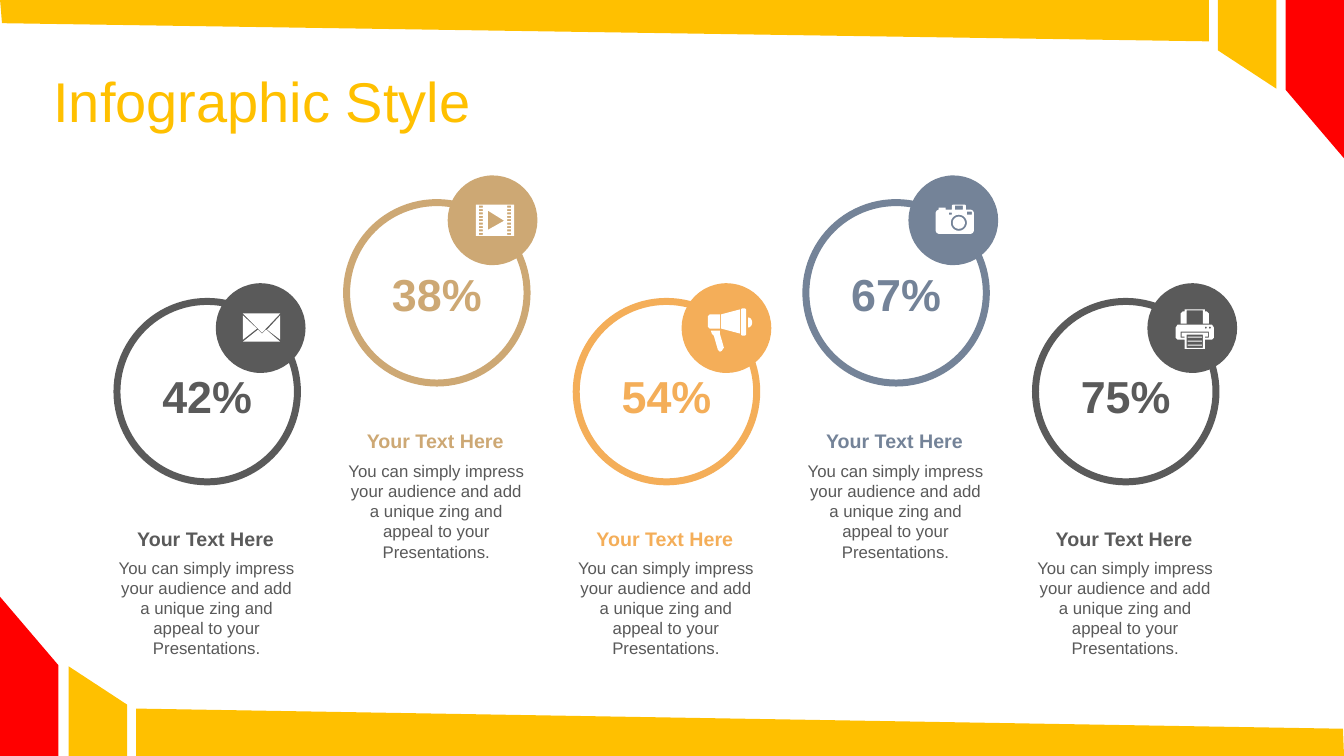
from dataclasses import dataclass
from math import cos, pi, sin

from pptx import Presentation
from pptx.dml.color import RGBColor
from pptx.enum.shapes import MSO_SHAPE
from pptx.enum.text import MSO_ANCHOR, MSO_AUTO_SIZE, PP_ALIGN
from pptx.shapes.autoshape import Shape
from pptx.slide import Slide
from pptx.text.text import TextFrame
from pptx.util import Inches, Pt

OVAL = MSO_SHAPE.OVAL
LEFT, CENTER = PP_ALIGN.LEFT, PP_ALIGN.CENTER
MIDDLE, TOP = MSO_ANCHOR.MIDDLE, MSO_ANCHOR.TOP
GROW, FIXED = MSO_AUTO_SIZE.SHAPE_TO_FIT_TEXT, MSO_AUTO_SIZE.NONE

WHITE, GOLD, RED = "FFFFFF", "FFC000", "FF0000"
GREY, TAN, ORANGE, SLATE = "5A5A5A", "CDA874", "F4AE59", "748398"
BODY_GREY = "595959"
HEADING = "Your Text Here"
BODY = ("You can simply impress your audience and add a unique zing "
        "and appeal to your Presentations.")
RING, BADGE = 1.79, 0.89
FIRST_LEFT, SPAN = 1.16, 9.11

Contour = list[tuple[float, float]]


def rect(x1: float, y1: float, x2: float, y2: float) -> Contour:
    return [(x1, y1), (x2, y1), (x2, y2), (x1, y2)]


def chamfered(x1: float, y1: float, x2: float, y2: float, c: float) -> Contour:
    return [(x1 + c, y1), (x2 - c, y1), (x2, y1 + c), (x2, y2 - c),
            (x2 - c, y2), (x1 + c, y2), (x1, y2 - c), (x1, y1 + c)]


def arc(cx: float, cy: float, rx: float, ry: float,
        start: float = 0, end: float = 2 * pi, steps: int = 32) -> Contour:
    angles = [start + (end - start) * i / steps for i in range(steps + 1)]
    return [(cx + rx * cos(a), cy + ry * sin(a)) for a in angles]


@dataclass
class Level:
    ring: float
    badge: float
    percent: float
    heading: float
    body: float


@dataclass
class Stat:
    percent: str
    color: str
    level: Level
    badge_left: float
    icon: list[Contour]


@dataclass
class Panel:
    color: str
    outline: Contour


PANELS = [
    Panel(GOLD, [(1.35, 7.03), (13.32, 7.23), (13.33, 7.5), (1.35, 7.5)]),
    Panel(GOLD, [(0.68, 6.61), (1.26, 6.99), (1.26, 7.5), (0.68, 7.5)]),
    Panel(RED, [(0, 5.92), (0.58, 6.6), (0.58, 7.5), (0, 7.5)]),
    Panel(GOLD, [(11.99, 0.41), (0.02, 0.23), (0, -0.01), (11.99, -0.01)]),
    Panel(GOLD, [(12.66, 0.88), (12.08, 0.5), (12.08, -0.01), (12.66, -0.01)]),
    Panel(RED, [(13.33, 1.57), (12.75, 0.89), (12.75, -0.01), (13.33, -0.01)]),
]

ENVELOPE = [
    [(2.64, 3.27), (2.78, 3.39), (2.41, 3.39), (2.56, 3.27), (2.6, 3.31)],
    [(2.78, 3.13), (2.78, 3.37), (2.65, 3.27)],
    [(2.41, 3.13), (2.55, 3.26), (2.41, 3.37)],
    [(2.41, 3.11), (2.78, 3.11), (2.6, 3.3)],
]
FILM = [
    rect(4.72, 2.03, 5.1, 2.34),
    [(4.84, 2.09), (4.84, 2.28), (5, 2.19)],
    *[rect(x, 2.04 + 0.27 * i / 8, x + 0.04, 2.06 + 0.27 * i / 8)
      for i in range(9) for x in (4.75, 5.03)],
]
MEGAPHONE = [
    [(7.05, 3.28), (7.14, 3.28), (7.14, 3.31), (7.18, 3.45), (7.16, 3.48),
     (7.14, 3.49), (7.12, 3.47), (7.08, 3.33), (7.06, 3.31)],
    arc(7.42, 3.2, 0.04, 0.05, -pi / 2, pi / 2, 12),
    [(7.04, 3.12), (7.14, 3.12), (7.14, 3.26), (7.04, 3.26), (7.02, 3.24), (7.02, 3.14)],
    [(7.34, 3.07), (7.34, 3.31), (7.15, 3.26), (7.15, 3.12)],
    chamfered(7.35, 3.06, 7.4, 3.33, 0.01),
]
CAMERA = [
    [(9.31, 2.08), (9.31, 2.06), (9.38, 2.06), (9.38, 2.08), (9.44, 2.08),
     (9.44, 2.04), (9.45, 2.03), (9.57, 2.03), (9.58, 2.04), (9.58, 2.08),
     (9.63, 2.08), (9.65, 2.09), (9.66, 2.11), (9.66, 2.29), (9.65, 2.31),
     (9.63, 2.32), (9.31, 2.32), (9.29, 2.31), (9.28, 2.29), (9.28, 2.11), (9.29, 2.09)],
    arc(9.51, 2.21, 0.08, 0.08),
    arc(9.51, 2.21, 0.06, 0.06),
    rect(9.41, 2.11, 9.44, 2.13),
    rect(9.59, 2.1, 9.64, 2.13),
    rect(9.47, 2.04, 9.55, 2.08),
]
PRINTER = [
    [(11.68, 3.22), (12.02, 3.22), (12.04, 3.25), (12.04, 3.35), (12.02, 3.37),
     (11.95, 3.37), (11.95, 3.46), (11.75, 3.46), (11.75, 3.37), (11.68, 3.37),
     (11.66, 3.35), (11.66, 3.25)],
    [(11.71, 3.29), (11.71, 3.35), (11.75, 3.35), (11.75, 3.34), (11.72, 3.34),
     (11.72, 3.3), (11.98, 3.3), (11.98, 3.34), (11.95, 3.34), (11.95, 3.35),
     (11.99, 3.35), (11.99, 3.29)],
    rect(11.77, 3.32, 11.93, 3.45),
    *[rect(11.78, y, 11.92, y + 0.01) for y in (3.34, 3.38, 3.42)],
    *[arc(x, 3.25, 0.01, 0.01, steps=12) for x in (11.96, 12)],
    [(11.75, 3.07), (11.95, 3.07), (11.95, 3.09), (11.97, 3.09), (11.99, 3.11),
     (11.99, 3.21), (11.93, 3.21), (11.93, 3.08), (11.77, 3.08), (11.77, 3.21),
     (11.71, 3.21), (11.71, 3.11), (11.73, 3.09), (11.75, 3.09)],
]

LOW = Level(ring=2.99, badge=2.81, percent=3.61, heading=5.18, body=5.48)
HIGH = Level(ring=2.01, badge=1.74, percent=2.6, heading=4.21, body=4.52)
STATS = [
    Stat("42%", GREY, LOW, 2.14, ENVELOPE),
    Stat("38%", TAN, HIGH, 4.44, FILM),
    Stat("54%", ORANGE, LOW, 6.76, MEGAPHONE),
    Stat("67%", SLATE, HIGH, 9.01, CAMERA),
    Stat("75%", GREY, LOW, 11.38, PRINTER),
]


def rgb(value: str) -> RGBColor:
    return RGBColor.from_string(value)


def paint(sp: Shape, fill: str, line: str | None = None) -> None:
    sp.shadow.inherit = False
    sp.fill.solid()
    sp.fill.fore_color.rgb = rgb(fill)
    if line:
        sp.line.color.rgb = rgb(line)
        sp.line.width = Pt(5)
    else:
        sp.line.fill.background()


def add_outline(s: Slide, contours: list[Contour], color: str) -> None:
    scaled = [[(Inches(x), Inches(y)) for x, y in c] for c in contours]
    builder = s.shapes.build_freeform(*scaled[0][0], scale=1.0)
    for i, points in enumerate(scaled):
        if i:
            builder.move_to(*points[0])
        builder.add_line_segments(points[1:], close=True)
    paint(builder.convert_to_shape(), color)


def add_circle(s: Slide, x: float, y: float, size: float,
               fill: str, line: str | None = None) -> None:
    sp = s.shapes.add_shape(OVAL, Inches(x), Inches(y), Inches(size), Inches(size))
    paint(sp, fill, line)


def write(tf: TextFrame, text: str, size: float, color: str, bold: bool = False,
          align: PP_ALIGN = CENTER, anchor: MSO_ANCHOR = TOP,
          fit: MSO_AUTO_SIZE = GROW) -> None:
    frame = {"word_wrap": True, "auto_size": fit, "vertical_anchor": anchor}
    for name, value in frame.items():
        setattr(tf, name, value)
    p = tf.paragraphs[0]
    p.alignment = align
    r = p.add_run()
    r.text = text
    for name, value in {"name": "Arial", "size": Pt(size), "bold": bold}.items():
        setattr(r.font, name, value)
    r.font.color.rgb = rgb(color)


def add_text(s: Slide, x: float, y: float, w: float, h: float,
             text: str, size: float, color: str, bold: bool = False) -> None:
    sp = s.shapes.add_textbox(Inches(x), Inches(y), Inches(w), Inches(h))
    write(sp.text_frame, text, size, color, bold)


def add_stat(s: Slide, stat: Stat, left: float) -> None:
    level, color = stat.level, stat.color
    add_circle(s, left, level.ring, RING, WHITE, color)
    add_circle(s, stat.badge_left, level.badge, BADGE, color)
    add_outline(s, stat.icon, WHITE)
    add_text(s, left + 0.34, level.percent, 1.11, 0.64, stat.percent, 32, color, True)
    add_text(s, left - 0.1, level.heading, 1.96, 0.34, HEADING, 14, color, True)
    add_text(s, left - 0.1, level.body, 1.98, 1.11, BODY, 12, BODY_GREY)


def main() -> None:
    prs = Presentation()
    prs.slide_width, prs.slide_height = Inches(13.33), Inches(7.5)
    s = prs.slides.add_slide(prs.slide_layouts[5])
    title = s.shapes.title
    box = {"left": 0.43, "top": 0.64, "width": 12.66, "height": 0.79}
    for name, value in box.items():
        setattr(title, name, Inches(value))
    write(title.text_frame, "Infographic Style", 40, GOLD,
          align=LEFT, anchor=MIDDLE, fit=FIXED)
    title.text_frame.paragraphs[0].line_spacing = 0.9
    for panel in PANELS:
        add_outline(s, [panel.outline], panel.color)
    for i, stat in enumerate(STATS):
        add_stat(s, stat, FIRST_LEFT + SPAN * i / (len(STATS) - 1))
    prs.save("out.pptx")


if __name__ == "__main__":
    main()
